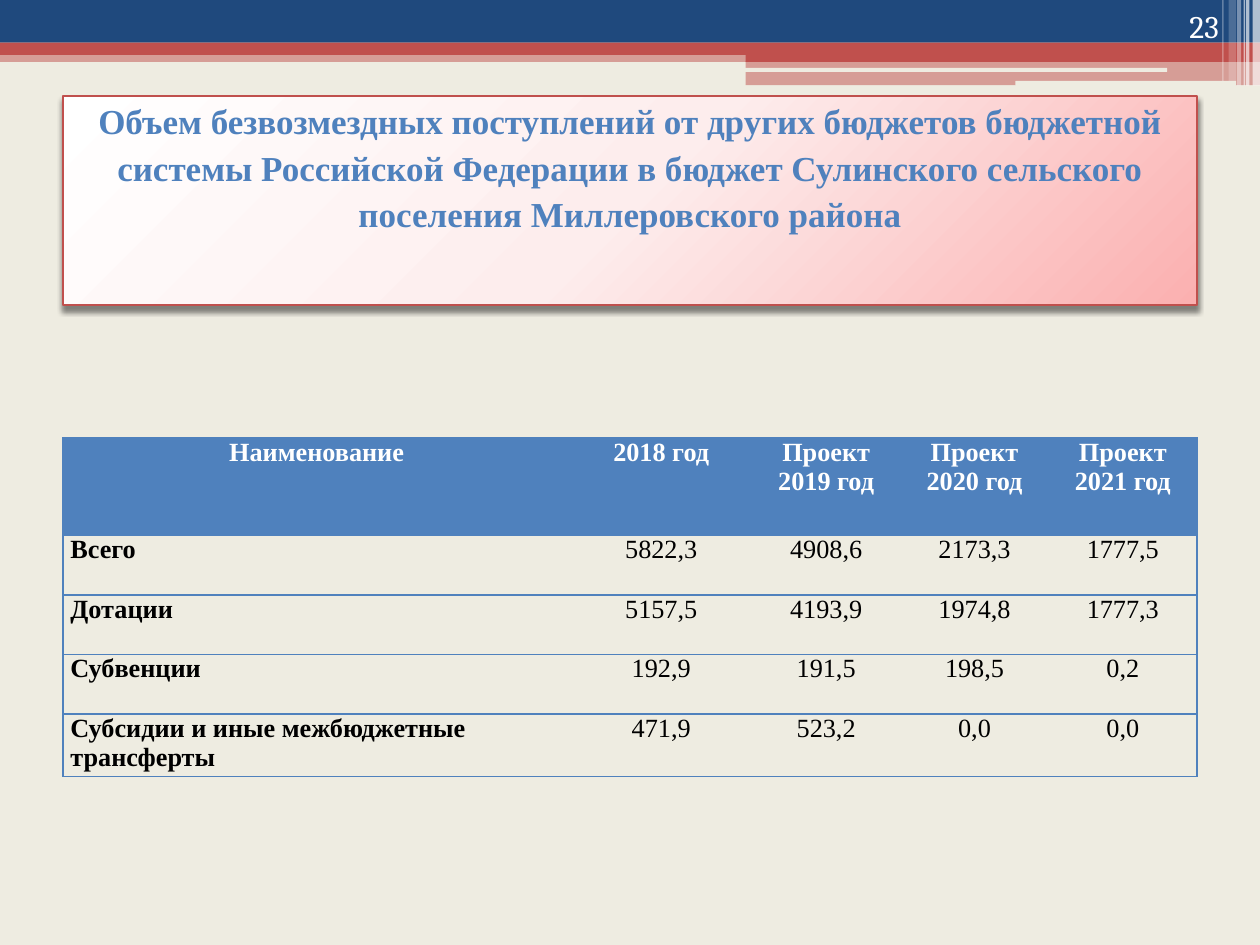
from copy import deepcopy

from lxml.etree import SubElement
from pptx import Presentation
from pptx.dml.color import RGBColor
from pptx.enum.shapes import MSO_SHAPE
from pptx.enum.text import MSO_ANCHOR, MSO_AUTO_SIZE, PP_ALIGN
from pptx.oxml import parse_xml
from pptx.oxml.ns import nsdecls, qn
from pptx.util import Cm, Pt

COLORS = {
    "background": "EEECE1",
    "navy": "1F497D",
    "red": "C0504D",
    "blue": "4F81BD",
    "white": "FFFFFF",
    "black": "000000",
    "pale pink": "FDEDED",
    "pink": "FBB0B0",
}


def rgb(name):
    return RGBColor.from_string(COLORS[name])


def style_text(frame, size, color, bold=False, align=PP_ALIGN.CENTER, font="Times New Roman"):
    """Format every paragraph and run of a text frame."""
    for para in frame.paragraphs:
        para.alignment = align
        for span in para.runs:
            span.font.name = font
            span.font.size = Pt(size)
            span.font.bold = bold
            span.font.color.rgb = rgb(color)


deck = Presentation()
deck.slide_width, deck.slide_height = Cm(25.4), Cm(19.05)
page = deck.slides.add_slide(deck.slide_layouts[5])
page.background.fill.solid()
page.background.fill.fore_color.rgb = rgb("background")

# Header bands and the strips at the right edge: left, top, width, height, colour, opacity in %
bands = [
    (0, 1.02, 25.4, 0.23, "red", 50),
    (0, 0, 25.4, 0.86, "navy", 100),
    (0, 0.86, 25.4, 0.25, "red", 100),
    (15.03, 0.99, 10.37, 0.26, "red", 100),
    (15.03, 1.23, 10.37, 0.49, "red", 50),
    (15.01, 1.37, 8.52, 0.08, "background", 100),
    (20.47, 1.63, 4.45, 0.1, "background", 100),
    (25.25, 0, 0.15, 1.73, "white", 65),
    (25.12, 0, 0.07, 1.73, "white", 65),
    (25.07, 0, 0.03, 1.73, "white", 60),
    (24.94, 0, 0.08, 1.73, "white", 40),
    (24.77, 0, 0.15, 1.63, "white", 20),
    (24.64, 0, 0.03, 1.63, "white", 30),
]
for left, top, width, height, color, opacity in bands:
    preset = MSO_SHAPE.ROUNDED_RECTANGLE if color == "background" else MSO_SHAPE.RECTANGLE
    band = page.shapes.add_shape(preset, Cm(left), Cm(top), Cm(width), Cm(height))
    band.shadow.inherit = False
    band.line.fill.background()
    band.fill.solid()
    band.fill.fore_color.rgb = rgb(color)
    if opacity < 100:
        solid = band.fill._xPr.find(qn("a:solidFill"))
        SubElement(solid[0], qn("a:alpha"), val=str(opacity * 1000))

# Title
title = page.shapes.title
title.left, title.top, title.width, title.height = Cm(1.27), Cm(1.93), Cm(22.86), Cm(4.22)
title.text_frame.text = (
    "Объем безвозмездных поступлений от других бюджетов бюджетной системы "
    "Российской Федерации в бюджет Сулинского сельского поселения Миллеровского района"
)
title.text_frame.auto_size = MSO_AUTO_SIZE.NONE
title.text_frame.vertical_anchor = MSO_ANCHOR.TOP
title.text_frame.margin_top = 0
title.text_frame.paragraphs[0].line_spacing = 1.1
style_text(title.text_frame, 20, "blue", bold=True)

title.fill.gradient()
title.fill.gradient_angle = 315
stops = title.fill._xPr.find(qn("a:gradFill")).find(qn("a:gsLst"))
stops.insert(1, deepcopy(stops[0]))
for stop, position, color in zip(title.fill.gradient_stops, (0, 0.5, 1), ("white", "pale pink", "pink")):
    stop.position = position
    stop.color.rgb = rgb(color)
title.line.color.rgb = rgb("red")
title.line.width = Pt(1)
title._element.spPr.append(parse_xml(
    f'<a:effectLst {nsdecls("a")}><a:outerShdw blurRad="40000" dist="38100" dir="5400000">'
    f'<a:srgbClr val="{COLORS["black"]}"><a:alpha val="45000"/></a:srgbClr>'
    "</a:outerShdw></a:effectLst>"
))

# Table of transfers
rows = [
    ("Наименование", "2018 год", "Проект 2019 год", "Проект 2020 год", "Проект 2021 год"),
    ("Всего", "5822,3", "4908,6", "2173,3", "1777,5"),
    ("Дотации", "5157,5", "4193,9", "1974,8", "1777,3"),
    ("Субвенции", "192,9", "191,5", "198,5", "0,2"),
    ("Субсидии и иные межбюджетные трансферты", "471,9", "523,2", "0,0", "0,0"),
]
column_widths = [10.23, 3.66, 2.99, 2.99, 2.99]
row_heights = [1.96, 1.2, 1.2, 1.2, 1.26]
last_column = len(column_widths) - 1
table = page.shapes.add_table(
    len(rows), len(column_widths), Cm(1.27), Cm(8.83), Cm(sum(column_widths)), Cm(sum(row_heights))
).table
for column, width in zip(table.columns, column_widths):
    column.width = Cm(width)
for row, height in zip(table.rows, row_heights):
    row.height = Cm(height)

for row_index, values in enumerate(rows):
    for column_index, value in enumerate(values):
        cell = table.cell(row_index, column_index)
        cell.text_frame.text = value
        cell.margin_left = cell.margin_right = Cm(0.15)
        cell.margin_top = cell.margin_bottom = 0
        header, name = row_index == 0, column_index == 0
        style_text(
            cell.text_frame, 15, "white" if header else "black", bold=header or name,
            align=PP_ALIGN.LEFT if name and not header else PP_ALIGN.CENTER,
        )
        drawn = {"lnL": name, "lnR": column_index == last_column, "lnT": True, "lnB": True}
        for side, visible in drawn.items():
            border = SubElement(cell._tc.get_or_add_tcPr(), qn(f"a:{side}"), w=str(Pt(1)))
            if visible:
                solid = SubElement(border, qn("a:solidFill"))
                SubElement(solid, qn("a:srgbClr"), val=COLORS["blue"])
            else:
                SubElement(border, qn("a:noFill"))
        if header:
            cell.fill.solid()
            cell.fill.fore_color.rgb = rgb("blue")
        else:
            cell.fill.background()

# Page number
number = page.shapes.add_textbox(Cm(22.71), Cm(0), Cm(2.11), Cm(1.02))
number.text_frame.word_wrap = True
number.text_frame.vertical_anchor = MSO_ANCHOR.BOTTOM
number.text_frame.text = "23"
style_text(number.text_frame, 18, "white", align=PP_ALIGN.RIGHT, font="Cambria")

deck.save("out.pptx")
